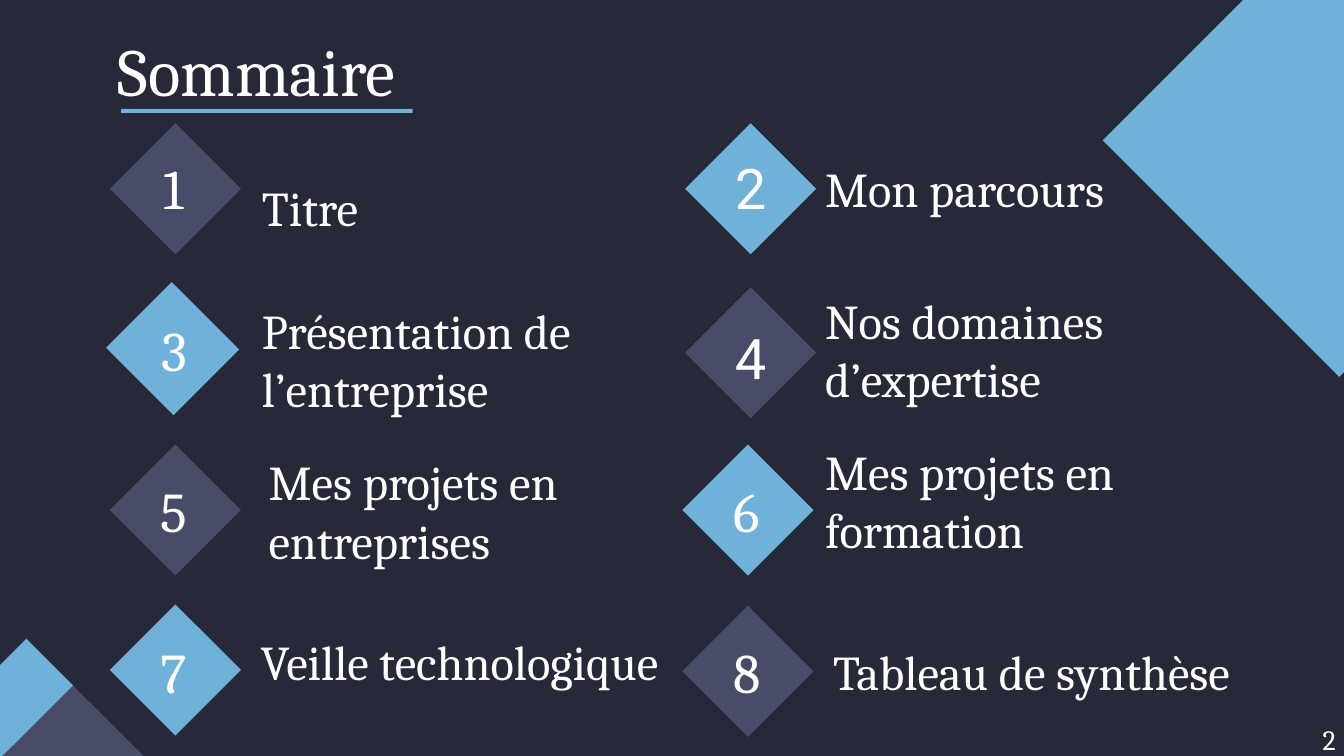
"""Build the 'Sommaire' agenda slide with eight numbered diamonds."""
from pptx import Presentation
from pptx.dml.color import RGBColor
from pptx.enum.shapes import MSO_SHAPE
from pptx.enum.text import MSO_ANCHOR, PP_ALIGN
from pptx.util import Inches, Pt

RECTANGLE = MSO_SHAPE.RECTANGLE
MIDDLE = MSO_ANCHOR.MIDDLE
LEFT, CENTER = PP_ALIGN.LEFT, PP_ALIGN.CENTER
COLORS = {"night": "282938", "violet": "484C68", "sky": "70B1DA", "white": "FFFFFF"}


def add_block(page, left, top, width, height, color, rotation=45):
    block = page.shapes.add_shape(
        RECTANGLE, Inches(left), Inches(top), Inches(width), Inches(height))
    block.rotation = rotation
    block.shadow.inherit = False
    block.fill.solid()
    block.fill.fore_color.rgb = RGBColor.from_string(COLORS[color])
    block.line.fill.background()


def add_text(page, left, top, width, height, text, size,
             font="Cambria", align=LEFT, inset=0.1):
    box = page.shapes.add_textbox(
        Inches(left), Inches(top), Inches(width), Inches(height))
    frame = box.text_frame
    frame.word_wrap = True
    frame.vertical_anchor = MIDDLE
    frame.margin_left = frame.margin_right = Inches(inset)
    frame.margin_top = frame.margin_bottom = Inches(inset)
    para = frame.paragraphs[0]
    para.alignment = align
    span = para.add_run()
    span.text = text
    span.font.size = Pt(size)
    span.font.name = font
    span.font.color.rgb = RGBColor.from_string(COLORS["white"])


deck = Presentation()
deck.slide_width = Inches(10)
deck.slide_height = deck.slide_width * 9 // 16
page = deck.slides.add_slide(deck.slide_layouts[6])
page.background.fill.solid()
page.background.fill.fore_color.rgb = RGBColor.from_string(COLORS["night"])

add_block(page, -0.12, 5.18, 0.93, 1.34, "violet")
add_block(page, -0.35, 4.73, 0.49, 1.34, "sky")
add_block(page, 8.72, -0.2, 2.49, 2.49, "sky")

add_text(page, 0.78, 0.22, 8.44, 0.59, "Sommaire", 36)
add_block(page, 1.97, -0.26, 0.03, 2.17, "sky", rotation=90)

entries = [
    ("Titre", (0.96, 1.06, 0.69, "violet"), (0.97, 1.11, "Cambria"), (1.85, 1.19)),
    ("Mon parcours", (5.24, 1.06, 0.69, "sky"), (5.26, 1.11, "Roboto"), (6.04, 1.05)),
    ("Présentation de l’entreprise", (0.93, 2.25, 0.71, "sky"),
     (0.97, 2.31, "Cambria"), (1.85, 2.32)),
    ("Nos domaines d’expertise", (5.24, 2.28, 0.69, "violet"),
     (5.26, 2.37, "Roboto"), (6.04, 2.25)),
    ("Mes projets en entreprises", (0.96, 3.45, 0.69, "violet"),
     (0.97, 3.51, "Cambria"), (1.9, 3.45)),
    ("Mes projets en formation", (5.22, 3.45, 0.69, "sky"),
     (5.23, 3.51, "Cambria"), (6.04, 3.37)),
    ("Veille technologique", (0.96, 4.64, 0.69, "sky"),
     (0.97, 4.71, "Cambria"), (1.84, 4.57)),
    ("Tableau de synthèse", (5.22, 4.65, 0.69, "violet"),
     (5.23, 4.71, "Cambria"), (6.1, 4.64)),
]
for number, (label, diamond, digit, place) in enumerate(entries, start=1):
    left, top, width, color = diamond
    add_block(page, left, top, width, 0.69, color)
    left, top, font = digit
    add_text(page, left, top, 0.65, 0.57, str(number), 30, font, CENTER)
    left, top = place
    add_text(page, left, top, 3.19, 0.7, label, 26)

add_text(page, 9.78, 5.38, 0.22, 0.24, "2", 15, align=CENTER, inset=0)

deck.save("out.pptx")
